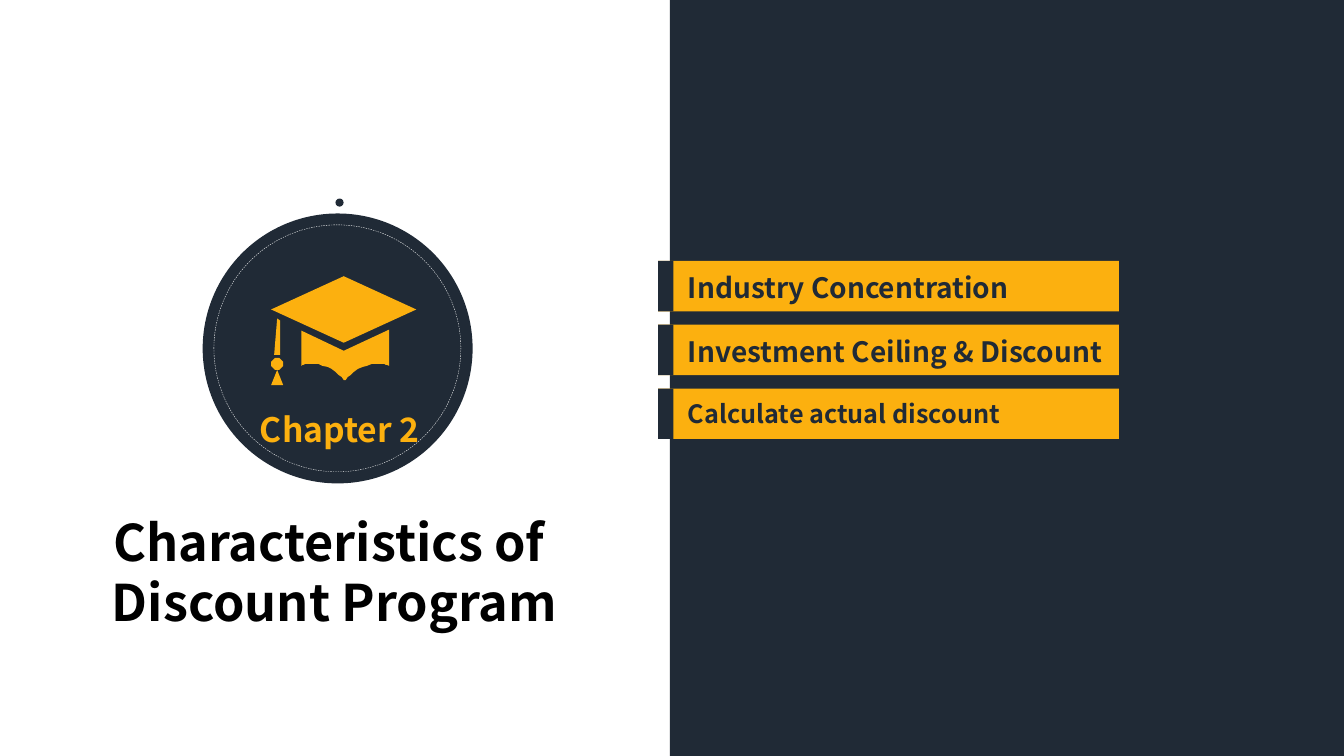
import math
import pptx
import pptx.util
import pptx.dml.color
import pptx.enum.dml
import pptx.enum.shapes
import pptx.enum.text

Pt = pptx.util.Pt
SHAPE = pptx.enum.shapes.MSO_SHAPE
ALIGN = pptx.enum.text.PP_ALIGN
ANCHOR = pptx.enum.text.MSO_ANCHOR
FIT = pptx.enum.text.MSO_AUTO_SIZE

theme = {
    "font": "Noto Sans CJK SC",
    "navy": pptx.dml.color.RGBColor.from_string("202A36"),
    "gold": pptx.dml.color.RGBColor.from_string("FCB00F"),
    "black": pptx.dml.color.RGBColor.from_string("000000"),
    "white": pptx.dml.color.RGBColor.from_string("FFFFFF"),
    "title": 36,
    "chapter": 24,
    "topic": 20,
    "topic_small": 18,
}

prs = pptx.Presentation()
prs.slide_width, prs.slide_height = Pt(960), Pt(540)
s = prs.slides.add_slide(prs.slide_layouts[6])


def add_text(text, box, size, color, align=ALIGN.LEFT, anchor=ANCHOR.TOP, wrap=False):
    sp = s.shapes.add_textbox(*[Pt(v) for v in box])
    tf = sp.text_frame
    tf.word_wrap = wrap
    tf.auto_size = FIT.NONE if wrap else FIT.SHAPE_TO_FIT_TEXT
    tf.vertical_anchor = anchor
    for i, line in enumerate(text.split("\n")):
        p = tf.paragraphs[0] if i == 0 else tf.add_paragraph()
        p.alignment = align
        r = p.add_run()
        r.text = line
        r.font.name = theme["font"]
        r.font.size = Pt(size)
        r.font.bold = True
        r.font.color.rgb = theme[color]


def add_block(kind, box, color):
    sp = s.shapes.add_shape(kind, *[Pt(v) for v in box])
    sp.shadow.inherit = False
    sp.line.fill.background()
    if color:
        sp.fill.solid()
        sp.fill.fore_color.rgb = theme[color]
    else:
        sp.fill.background()
    return sp


add_block(SHAPE.RECTANGLE, (478.5, 0, 481.5, 540), "navy")

topics = [
    ("Industry Concentration", 250.5, "topic"),
    ("Investment Ceiling & Discount", 325.5, "topic"),
    ("Calculate actual discount", 242.5, "topic_small"),
]
for i, (topic, width, size) in enumerate(topics):
    top = 186.4 + 45.6 * i
    add_block(SHAPE.RECTANGLE, (470, top, 329.2, 36), "gold")
    add_block(SHAPE.RECTANGLE, (470, top, 10.9, 36), "navy")
    add_text(topic, (484.3, top + 3.6, width, 31.5), theme[size], "navy")

add_text("Characteristics of \nDiscount Program", (65.5, 361.5, 347, 94.5),
         theme["title"], "black", align=ALIGN.CENTER)

add_block(SHAPE.OVAL, (144.8, 152.5, 192.8, 192.8), "navy")
add_block(SHAPE.OVAL, (239.6, 141.8, 5.8, 5.8), "navy")
add_text("Chapter 2", (149, 287.5, 187.2, 37.4), theme["chapter"], "gold",
         align=ALIGN.CENTER, anchor=ANCHOR.MIDDLE, wrap=True)

ring = add_block(SHAPE.OVAL, (152.8, 160.6, 176.4, 176.4), None)
ring.line.color.rgb = theme["white"]
ring.line.width = Pt(0.25)
ring.line.dash_style = pptx.enum.dml.MSO_LINE.DASH

hem_curves = [
    ((299, 363), (302, 361), (306, 361), (311, 361)),
    ((311, 361), (323, 361), (337, 370), (341, 377)),
    ((343, 377), (347, 370), (361, 361), (374, 361)),
    ((374, 361), (377, 361), (382, 361), (386, 363)),
]
hem = []
for a, b, c, d in hem_curves:
    for t in [n / 8 for n in range(9)]:
        hem.append(tuple((1 - t) ** 3 * a[k] + 3 * t * (1 - t) ** 2 * b[k]
                         + 3 * t * t * (1 - t) * c[k] + t ** 3 * d[k] for k in (0, 1)))
knob = [(275 + 6 * math.cos(math.radians(deg)), 361 + 6 * math.sin(math.radians(deg)))
        for deg in range(90, -271, -15)]

cap = [
    hem + [(386, 327), (341, 348), (299, 328)],
    [(341, 274), (269, 307), (341, 340), (413, 307)],
    [(275, 316), (272, 352), (278, 352), (278, 318)],
    [(281, 382)] + knob + [(269, 382)],
]
fb = s.shapes.build_freeform(*cap[0][0], scale=Pt(0.72))
for i, outline in enumerate(cap):
    if i:
        fb.move_to(*outline[0])
    fb.add_line_segments(outline[1:], close=True)
sp = fb.convert_to_shape()
sp.shadow.inherit = False
sp.fill.solid()
sp.fill.fore_color.rgb = theme["gold"]
sp.line.fill.background()

prs.save("out.pptx")
